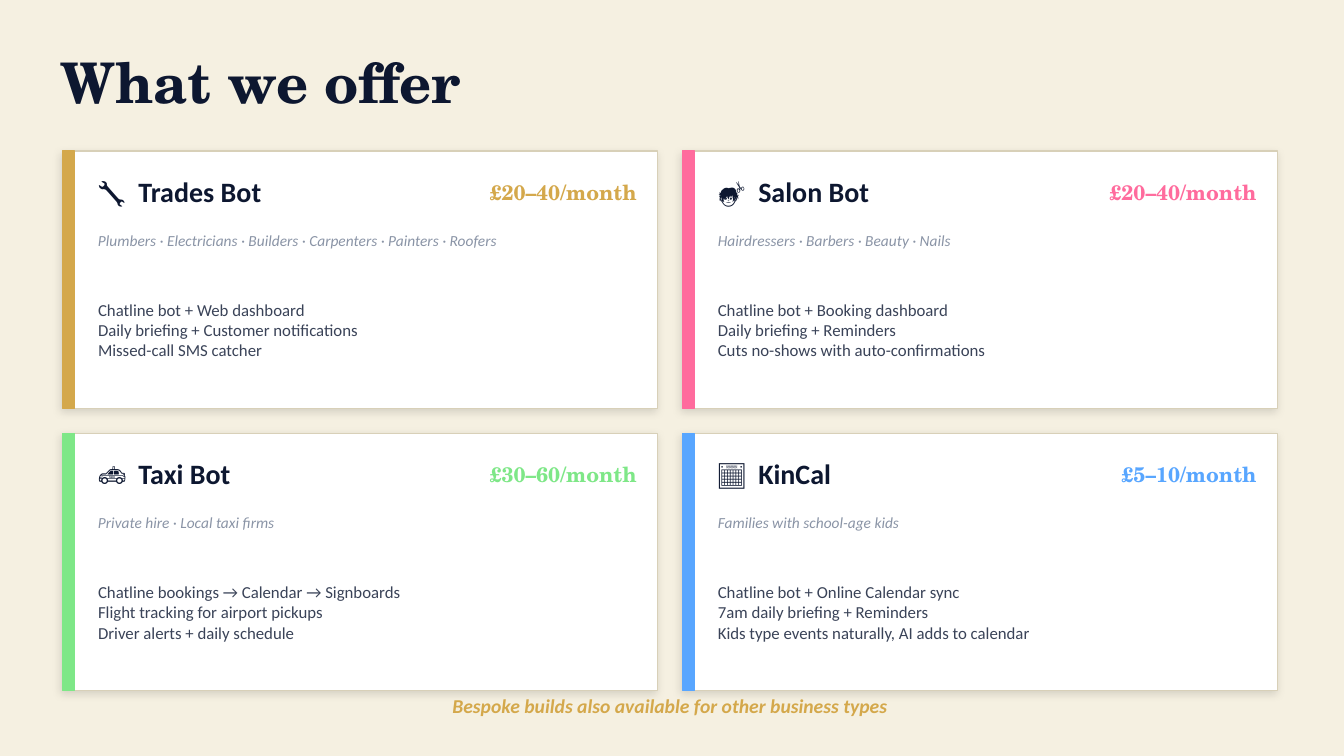
from lxml import etree
from pptx import Presentation
from pptx.dml.color import RGBColor
from pptx.enum.shapes import MSO_SHAPE
from pptx.enum.text import MSO_ANCHOR, MSO_AUTO_SIZE, PP_ALIGN
from pptx.oxml import parse_xml
from pptx.oxml.ns import nsdecls, qn
from pptx.util import Cm, Pt

RECTANGLE = MSO_SHAPE.RECTANGLE
MIDDLE = MSO_ANCHOR.MIDDLE
NO_AUTOFIT = MSO_AUTO_SIZE.NONE
LEFT, CENTER, RIGHT = PP_ALIGN.LEFT, PP_ALIGN.CENTER, PP_ALIGN.RIGHT

SERIF, SANS = "TeX Gyre Schola", "Calibri"
CREAM, WHITE, EDGE = "F5F0E1", "FFFFFF", "D8D0B8"
NAVY, SLATE, GREY, GOLD = "0D1730", "3A4358", "8A94A6", "D4A84B"

CARD_LEFT, CARD_TOP = 1.58, 3.81
CARD_WIDTH, CARD_HEIGHT = 14.99, 6.48
COLUMN_STEP, ROW_STEP = 15.62, 7.11
INSET = 0.89

OFFERS = [
    ("🔧", "Trades Bot", "£20–40/month", GOLD,
     "Plumbers · Electricians · Builders · Carpenters · Painters · Roofers",
     ["Chatline bot + Web dashboard",
      "Daily briefing + Customer notifications",
      "Missed-call SMS catcher"]),
    ("💇", "Salon Bot", "£20–40/month", "FF6B9D",
     "Hairdressers · Barbers · Beauty · Nails",
     ["Chatline bot + Booking dashboard",
      "Daily briefing + Reminders",
      "Cuts no-shows with auto-confirmations"]),
    ("🚕", "Taxi Bot", "£30–60/month", "7EE787",
     "Private hire · Local taxi firms",
     ["Chatline bookings → Calendar → Signboards",
      "Flight tracking for airport pickups",
      "Driver alerts + daily schedule"]),
    ("📅", "KinCal", "£5–10/month", "58A6FF",
     "Families with school-age kids",
     ["Chatline bot + Online Calendar sync",
      "7am daily briefing + Reminders",
      "Kids type events naturally, AI adds to calendar"]),
]


def rgb(hex_string):
    return RGBColor.from_string(hex_string)


class OfferSlide:
    def __init__(self, presentation):
        # The Comparison layout has a title and four body placeholders
        self.slide = presentation.slides.add_slide(presentation.slide_layouts[4])
        self.shapes = self.slide.shapes
        background = self.slide.background.fill
        background.solid()
        background.fore_color.rgb = rgb(CREAM)

    def place(self, shape, left, top, width, height):
        shape.left, shape.top = Cm(left), Cm(top)
        shape.width, shape.height = Cm(width), Cm(height)

    def set_text(self, shape, text, size, color, font=SANS, bold=False,
                 italic=False, align=LEFT):
        frame = shape.text_frame
        frame.text = text
        frame.word_wrap = True
        frame.auto_size = NO_AUTOFIT
        frame.vertical_anchor = MIDDLE
        frame.margin_left = frame.margin_right = 0
        frame.margin_top = frame.margin_bottom = 0
        for paragraph in frame.paragraphs:
            paragraph.alignment = align
            paragraph.space_before = Pt(0)
            for run in paragraph.runs:
                run.font.name = font
                run.font.size = Pt(size)
                run.font.bold = bold
                run.font.italic = italic
                run.font.color.rgb = rgb(color)
        return frame

    def title(self, text):
        heading = self.shapes.title
        self.place(heading, 1.52, 1.02, 30.48, 2.03)
        self.set_text(heading, text, 40, NAVY, SERIF, bold=True)

    def label(self, text, box, size, color, **style):
        text_box = self.shapes.add_textbox(*map(Cm, box))
        return self.set_text(text_box, text, size, color, **style)

    def plain_list(self, placeholder, lines, box):
        """Fill a body placeholder with unbulleted lines, in front of its card."""
        self.place(placeholder, *box)
        frame = self.set_text(placeholder, "\n".join(lines), 12, SLATE)
        for paragraph in frame.paragraphs:
            properties = paragraph._p.get_or_add_pPr()
            properties.set("marL", "0")
            properties.set("indent", "0")
            etree.SubElement(properties, qn("a:buNone"))
        self.shapes._spTree.append(placeholder._element)

    def rectangle(self, box, fill, line):
        shape = self.shapes.add_shape(RECTANGLE, *map(Cm, box))
        shape.shadow.inherit = False
        shape.fill.solid()
        shape.fill.fore_color.rgb = rgb(fill)
        shape.line.color.rgb = rgb(line)
        shape.line.width = Pt(1)
        return shape

    def soft_shadow(self, shape):
        effects = shape._element.spPr.find(qn("a:effectLst"))
        effects.append(parse_xml(
            f'<a:outerShdw {nsdecls("a")} blurRad="{Pt(6)}" dist="{Pt(2)}" '
            'dir="8100000" algn="bl" rotWithShape="0"><a:srgbClr val="000000">'
            '<a:alpha val="12000"/></a:srgbClr></a:outerShdw>'))

    def card(self, left, top, offer, placeholder):
        icon, name, price, accent, audience, features = offer
        panel = self.rectangle((left, top, CARD_WIDTH, CARD_HEIGHT), WHITE, EDGE)
        self.soft_shadow(panel)
        self.rectangle((left, top, 0.3, CARD_HEIGHT), accent, accent)

        text_left = left + INSET
        heading = self.label(f"{icon}\t{name}", (text_left, top + 0.38, 8.89, 1.27),
                             20, NAVY, bold=True)
        properties = heading.paragraphs[0]._p.get_or_add_pPr()
        tabs = etree.SubElement(properties, qn("a:tabLst"))
        etree.SubElement(tabs, qn("a:tab"), pos=str(Cm(1.02)), algn="l")

        self.label(price, (left + 9.14, top + 0.51, 5.33, 1.02), 15, accent,
                   font=SERIF, bold=True, align=RIGHT)
        self.label(audience, (text_left, top + 1.73, 13.46, 1.02), 11, GREY,
                   italic=True)
        self.plain_list(placeholder, features, (text_left, top + 2.79, 13.46, 3.43))


def main():
    presentation = Presentation()
    presentation.slide_width, presentation.slide_height = Cm(33.87), Cm(19.05)
    page = OfferSlide(presentation)
    page.title("What we offer")
    bodies = list(page.slide.placeholders)[1:]
    for index, (offer, body) in enumerate(zip(OFFERS, bodies)):
        row, column = divmod(index, 2)
        page.card(CARD_LEFT + column * COLUMN_STEP, CARD_TOP + row * ROW_STEP,
                  offer, body)
    page.label("Bespoke builds also available for other business types",
               (1.27, 17.27, 31.24, 1.02), 14, GOLD, bold=True, italic=True,
               align=CENTER)
    presentation.save("out.pptx")


if __name__ == "__main__":
    main()
